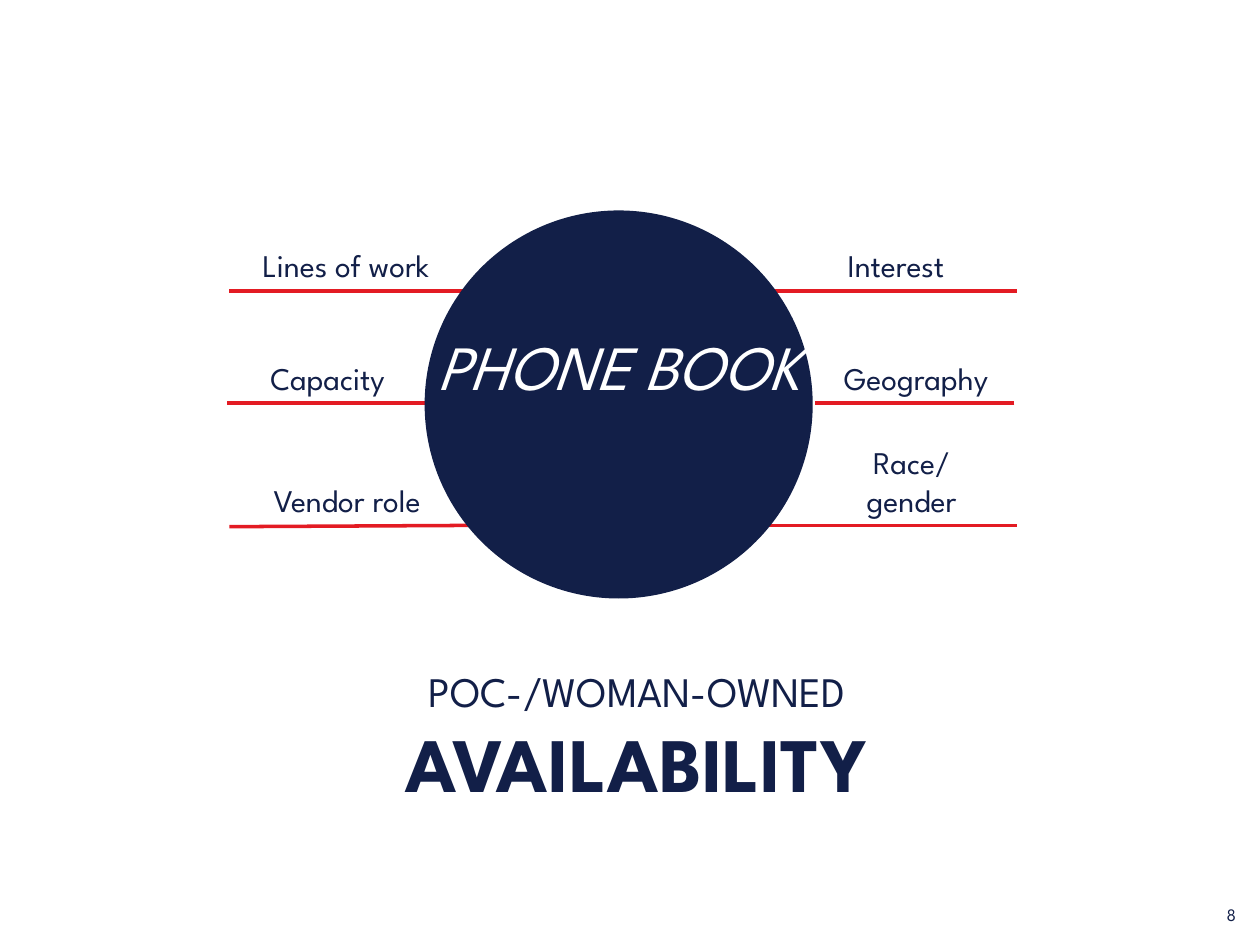
from dataclasses import dataclass

from pptx import Presentation
from pptx.dml.color import RGBColor
from pptx.enum.shapes import MSO_CONNECTOR as Connector, MSO_SHAPE as Shape
from pptx.enum.text import MSO_ANCHOR as Anchor, PP_ALIGN as Align
from pptx.oxml.ns import qn
from pptx.util import Inches, Pt


@dataclass(frozen=True)
class Theme:
    font: str = "League Spartan"
    navy: RGBColor = RGBColor(0x12, 0x1F, 0x48)
    red: RGBColor = RGBColor(0xE3, 0x1B, 0x23)
    white: RGBColor = RGBColor(0xFF, 0xFF, 0xFF)
    rule: float = 2
    number: float = 10
    label: float = 18
    subtitle: float = 24
    circle: float = 36
    headline: float = 44


THEME = Theme()

LABELS = [
    (["Interest"], (6.15, 1.9, 1.92, 0.4), (8.07, 2.31, 6.15, 2.31)),
    (["Race/", "gender"], (6.31, 3.47, 1.85, 0.71), (8.07, 4.17, 6, 4.17)),
    (["Capacity"], (1.82, 2.8, 1.56, 0.4), (3.38, 3.2, 1.8, 3.2)),
    (["Lines of work"], (1.82, 1.9, 1.85, 0.4), (3.74, 2.31, 1.82, 2.31)),
    (["Vendor role"], (1.79, 3.77, 1.93, 0.4), (3.77, 4.17, 1.82, 4.18)),
    (["Geography"], (6.43, 2.8, 1.68, 0.4), (8.05, 3.2, 6.47, 3.2)),
]
CIRCLE = (3.37, 1.67, 3.08, 3.08)
CIRCLE_TITLE = ("PHONE BOOK", (3.37, 2.55, 3.08, 1.31))
HEADLINE_AREA = (1.85, 5.16, 6.41, 1.31)
HEADLINE = [
    ("POC-/WOMAN-OWNED ", THEME.subtitle, False),
    ("AVAILABILITY", THEME.headline, True),
]
PAGE_NUMBER = ("8", (7.58, 7.12, 2.33, 0.27))


def inches(values):
    return [Inches(value) for value in values]


def add_span(para, text, size, color=THEME.navy, bold=False, italic=False):
    span = para.add_run()
    span.text = text
    font = span.font
    font.name, font.size = THEME.font, Pt(size)
    font.bold, font.italic = bold, italic
    font.color.rgb = color


def start_para(box, align=Align.CENTER, anchor=Anchor.TOP):
    frame = box.text_frame
    frame.word_wrap = True
    frame.vertical_anchor = anchor
    para = frame.paragraphs[0]
    para.alignment = align
    return para


def add_shape(page, kind, area):
    shape = page.shapes.add_shape(kind, *inches(area))
    shape.shadow.inherit = False
    shape.line.fill.background()
    return shape


def add_rule(page, ends):
    rule = page.shapes.add_connector(Connector.STRAIGHT, *inches(ends))
    rule.line.color.rgb = THEME.red
    rule.line.width = Pt(THEME.rule)
    properties = rule._element.spPr
    properties.append(properties.makeelement(qn("a:effectLst"), {}))


def add_label(page, lines, area):
    para = start_para(page.shapes.add_textbox(*inches(area)))
    for index, line in enumerate(lines):
        if index:
            para.add_line_break()
        add_span(para, line, THEME.label)


def add_circle(page):
    circle = add_shape(page, Shape.OVAL, CIRCLE)
    circle.fill.solid()
    circle.fill.fore_color.rgb = THEME.navy
    text, area = CIRCLE_TITLE
    box = page.shapes.add_textbox(*inches(area))
    box.text_frame.margin_left = box.text_frame.margin_right = 0
    add_span(start_para(box), text, THEME.circle, THEME.white, italic=True)


def add_headline(page):
    box = add_shape(page, Shape.ROUND_2_SAME_RECTANGLE, HEADLINE_AREA)
    box.fill.background()
    para = start_para(box, anchor=Anchor.MIDDLE)
    para.space_after = Pt(18)
    for text, size, bold in HEADLINE:
        add_span(para, text, size, bold=bold)


def add_page_number(page):
    text, area = PAGE_NUMBER
    box = page.shapes.add_textbox(*inches(area))
    add_span(start_para(box, Align.RIGHT, Anchor.MIDDLE), text, THEME.number)


def main():
    deck = Presentation()
    deck.slide_width, deck.slide_height = Inches(10), Inches(7.5)
    page = deck.slides.add_slide(deck.slide_layouts[6])
    for lines, area, ends in LABELS:
        add_rule(page, ends)
        add_label(page, lines, area)
    add_circle(page)
    add_headline(page)
    add_page_number(page)
    deck.save("out.pptx")


if __name__ == "__main__":
    main()
